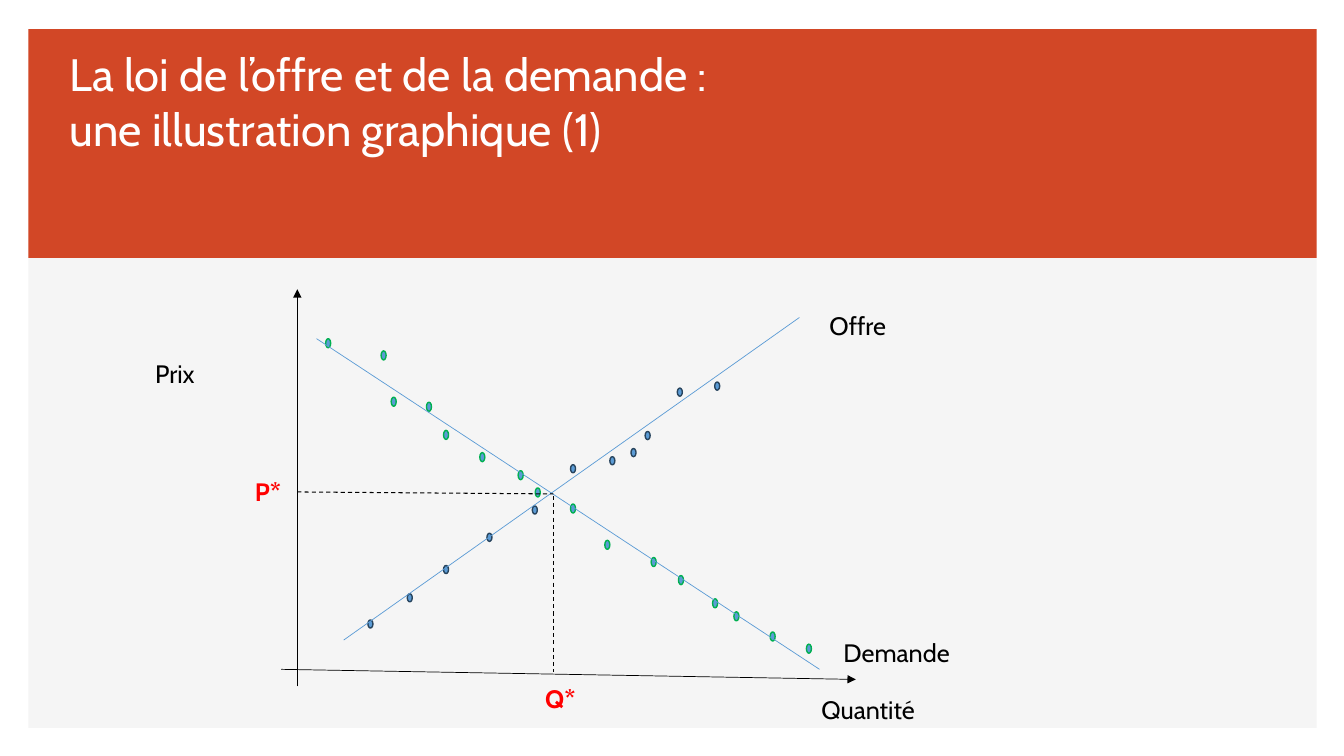
from pptx import Presentation
from pptx.dml.color import RGBColor
from pptx.enum.dml import MSO_LINE
from pptx.enum.shapes import MSO_CONNECTOR, MSO_SHAPE
from pptx.enum.text import MSO_ANCHOR, MSO_AUTO_SIZE, PP_ALIGN
from pptx.oxml.ns import qn
from pptx.util import Pt
from lxml.etree import SubElement

WHITE = RGBColor(0xFF, 0xFF, 0xFF)
BLACK = RGBColor(0x00, 0x00, 0x00)
GREY = RGBColor(0xF5, 0xF5, 0xF5)
ORANGE = RGBColor(0xD2, 0x47, 0x26)
BLUE = RGBColor(0x5B, 0x9B, 0xD5)
NAVY = RGBColor(0x28, 0x44, 0x5D)
GREEN = RGBColor(0x00, 0xB0, 0x50)
RED = RGBColor(0xFF, 0x00, 0x00)


def add_form(kind, left, top, width, height, fill, edge=None):
    form = slide.shapes.add_shape(kind, Pt(left), Pt(top), Pt(width), Pt(height))
    form.shadow.inherit = False
    form.fill.solid()
    form.fill.fore_color.rgb = fill
    if edge is None:
        form.line.fill.background()
    else:
        form.line.color.rgb = edge
        form.line.width = Pt(1)


def add_run(para, text, size, color, bold=False):
    run = para.add_run()
    run.text = text
    run.font.name = "Cabin"
    run.font.size = Pt(size)
    run.font.bold = bold
    run.font.color.rgb = color


deck = Presentation()
deck.slide_width, deck.slide_height = Pt(960), Pt(540)
slide = deck.slides.add_slide(deck.slide_layouts[5])

# Background panels, with the title brought in front of them
for height, fill in ((499, GREY), (163.4, ORANGE)):
    add_form(MSO_SHAPE.RECTANGLE, 20.2, 20.9, 920.2, height, fill)

title = slide.shapes.title
slide.shapes._spTree.append(title._element)
title.left, title.top, title.width, title.height = Pt(42.5), Pt(64.1), Pt(825.1), Pt(50.4)
frame = title.text_frame
frame.auto_size = MSO_AUTO_SIZE.NONE
frame.word_wrap = True
frame.vertical_anchor = MSO_ANCHOR.BOTTOM
para = frame.paragraphs[0]
para.alignment = PP_ALIGN.LEFT
add_run(para, "La loi de l’offre et de la demande : ", 32.4, WHITE)
para.add_line_break()
add_run(para, "une illustration graphique (1)", 32.4, WHITE)

# Observed points: left and top of each dot
supply = [
    (262.8, 442.8), (290.9, 424.1), (316.8, 403.9), (347.8, 380.9),
    (380.2, 361.4), (407.5, 331.9), (435.6, 326.2), (460.8, 308.2),
    (450.7, 320.4), (483.8, 277.2), (510.5, 272.9),
]
demand = [
    (232.6, 241.9), (272.2, 250.6), (279.4, 283.7), (304.6, 287.3),
    (316.8, 307.4), (342.7, 323.3), (370.1, 336.2), (407.5, 360),
    (382.3, 348.5), (432, 385.9), (524.2, 437), (550.1, 451.4),
    (509, 427.7), (576, 460.1), (465.1, 398.2), (484.6, 411.1),
]
for dots, height, edge in ((supply, 5.8, NAVY), (demand, 6.5, GREEN)):
    for left, top in dots:
        add_form(MSO_SHAPE.OVAL, left, top, 3.6, height, BLUE, edge)

# Axes, curves and equilibrium guides
lines = [
    (200.9, 478.1, 611.3, 485.3, BLACK, "axis"),
    (212.4, 490.3, 212.4, 206.6, BLACK, "axis"),
    (245.5, 457.2, 571, 226.8, BLUE, "curve"),
    (226.1, 241.9, 585.4, 478.1, BLUE, "curve"),
    (395.3, 354.2, 395.3, 480.2, BLACK, "guide"),
    (212.4, 351.4, 395.3, 352.8, BLACK, "guide"),
]
for x1, y1, x2, y2, color, role in lines:
    link = slide.shapes.add_connector(
        MSO_CONNECTOR.STRAIGHT, Pt(x1), Pt(y1), Pt(x2), Pt(y2))
    link.line.color.rgb = color
    link.line.width = Pt(0.75 if role == "guide" else 0.5)
    if role == "guide":
        link.line.dash_style = MSO_LINE.DASH
    props = link._element.spPr
    if role == "axis":
        SubElement(props.find(qn("a:ln")), qn("a:tailEnd"), type="triangle")
    SubElement(props, qn("a:effectLst"))

labels = [
    ("Quantité", 579.6, 492.5, 99.4, BLACK),
    ("Prix", 103.7, 252.7, 99.4, BLACK),
    ("Offre", 585.4, 218.2, 84.2, BLACK),
    ("Demande", 595.4, 451.4, 149.8, BLACK),
    ("P*", 175, 337, 33.8, RED),
    ("Q*", 382.3, 484.6, 36.7, RED),
]
for text, left, top, width, color in labels:
    box = slide.shapes.add_textbox(Pt(left), Pt(top), Pt(width), Pt(28.8))
    frame = box.text_frame
    frame.word_wrap = color == BLACK
    frame.auto_size = MSO_AUTO_SIZE.SHAPE_TO_FIT_TEXT
    add_run(frame.paragraphs[0], text, 18, color, color == RED)

deck.save("out.pptx")
